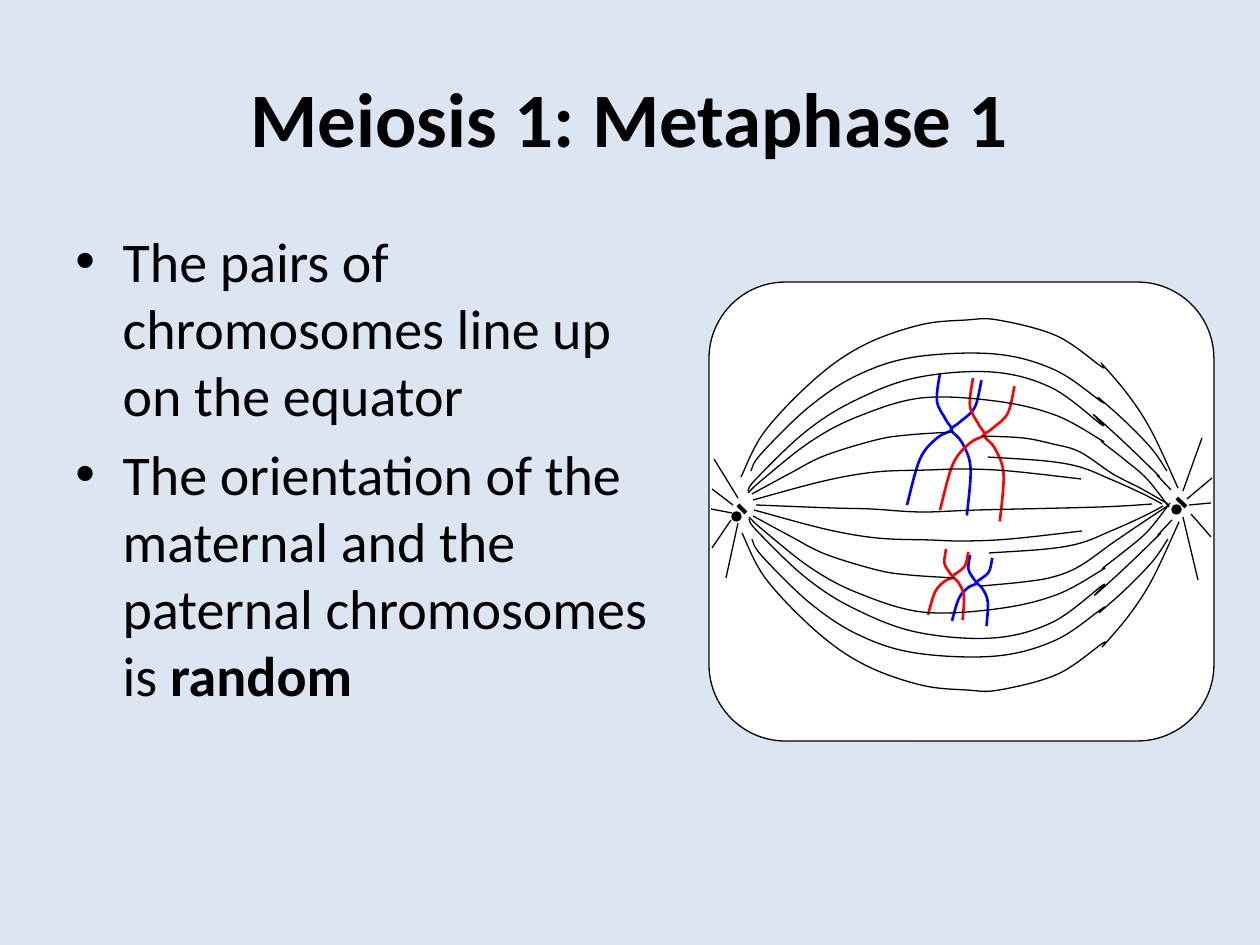
from lxml.etree import SubElement
from pptx import Presentation
from pptx.dml.color import RGBColor
from pptx.enum.shapes import MSO_CONNECTOR, MSO_SHAPE as SHAPE
from pptx.enum.text import MSO_ANCHOR, PP_ALIGN
from pptx.oxml.ns import qn
from pptx.util import Pt

PX = 914400 / 126
HEX = {"sky": "DCE6F2", "ink": "000000", "cell": "FFFFFF",
       "blue": "0000FF", "red": "FF0000"}
RGB = {name: RGBColor.from_string(code) for name, code in HEX.items()}


def emu(*nums):
    return [round(n * PX) for n in nums]


def curve(knots, tone="ink", width=0.75):
    """Draw a smooth open curve through the knots, given in px."""
    pts = [tuple(emu(*k)) for k in knots]
    pen = parts.build_freeform(*pts[0], scale=1.0)
    pen.add_line_segments(pts[1:], close=False)
    shape = pen.convert_to_shape()
    shape.shadow.inherit = False
    shape.fill.background()
    shape.line.color.rgb = RGB[tone]
    shape.line.width = Pt(width)
    left, top = (min(p[i] for p in pts) for i in (0, 1))
    loc = [(x - left, y - top) for x, y in pts]
    ends = [loc[0]] + loc + [loc[-1]]
    track = shape.element.find(".//" + qn("a:path"))
    for seg in track.findall(qn("a:lnTo")):
        track.remove(seg)
    for a, b, c, d in zip(ends, ends[1:], ends[2:], ends[3:]):
        # Each knot's tangent runs parallel to the chord of its neighbours.
        one = [q + (r - p) / 6 for p, q, r in zip(a, b, c)]
        two = [q - (r - p) / 6 for p, q, r in zip(b, c, d)]
        bez = SubElement(track, qn("a:cubicBezTo"))
        for x, y in (one, two, c):
            SubElement(bez, qn("a:pt"), x=str(round(x)), y=str(round(y)))
    return shape


prs = Presentation()
prs.slide_width, prs.slide_height = emu(1260, 945)
slide = prs.slides.add_slide(prs.slide_layouts[6])
slide.background.fill.solid()
slide.background.fill.fore_color.rgb = RGB["sky"]

# Title and bullets
title = [[("Meiosis 1: Metaphase 1", True)]]
notes = [
    [("The pairs of chromosomes line up on the equator", False)],
    [("The orientation of the maternal and the paternal chromosomes is ", False),
     ("random", True)],
]
for box, paras, size, listed in (
        ((63, 38, 1134, 157), title, 44, False),
        ((63, 220, 619, 624), notes, 32, True)):
    frame = slide.shapes.add_textbox(*emu(*box)).text_frame
    frame.word_wrap = True
    frame.vertical_anchor = MSO_ANCHOR.TOP if listed else MSO_ANCHOR.MIDDLE
    for i, runs in enumerate(paras):
        para = frame.add_paragraph() if i else frame.paragraphs[0]
        para.alignment = PP_ALIGN.LEFT if listed else PP_ALIGN.CENTER
        if i:
            para.space_before = Pt(6.4)
        if listed:
            props = para._p.get_or_add_pPr()
            props.set("marL", "342900")
            props.set("indent", "-342900")
            SubElement(props, qn("a:buFont"), typeface="Arial")
            SubElement(props, qn("a:buChar"), char="•")
        for text, bold in runs:
            run = para.add_run()
            run.text = text
            run.font.name = "Calibri"
            run.font.size = Pt(size)
            run.font.bold = bold
            run.font.color.rgb = RGB["ink"]

# Cell and centrioles
parts = slide.shapes.add_group_shape().shapes
for kind, box, tone in (
        (SHAPE.ROUNDED_RECTANGLE, (709, 282, 505, 459), "cell"),
        (SHAPE.OVAL, (732, 512, 9, 9), "ink"),
        (SHAPE.OVAL, (1172, 505, 9, 9), "ink")):
    body = parts.add_shape(kind, *emu(*box))
    body.shadow.inherit = False
    body.fill.solid()
    body.fill.fore_color.rgb = RGB[tone]
    body.line.color.rgb = RGB["ink"]
    body.line.width = Pt(0.75)

# Asters: the last line of each is the thick centriole
left = [(738, 498, 714, 459), (733, 505, 712, 489), (732, 513, 711, 509),
        (712, 548, 731, 520), (738, 523, 726, 578), (738, 505, 746, 513)]
right = [(1183, 491, 1202, 438), (1187, 499, 1212, 478), (1189, 505, 1211, 503),
         (1211, 537, 1191, 514), (1183, 517, 1198, 580), (1177, 498, 1186, 507)]
for aster in (left, right):
    for ray in aster:
        line = parts.add_connector(MSO_CONNECTOR.STRAIGHT, *emu(*ray))
        line.line.color.rgb = RGB["ink"]
        line.line.width = Pt(2.25 if ray == aster[-1] else 0.75)
        SubElement(line.element.spPr, qn("a:effectLst"))

# Chromosomes: each is a chromatid and its mirrored, turned sister
arm = [(33, 0), (30, 28), (39, 47), (44, 57), (30, 65), (13, 86), (0, 132)]
for tone, sx, sy, first, sister in (
        ("blue", 1, 1, (907, 373), (946, 380)),
        ("red", 1, 1, (940, 378), (979, 386)),
        ("blue", 0.55, 0.5, (952, 555), (974, 558)),
        ("red", 0.55, 0.5, (928, 549), (950, 552))):
    x, y = first
    curve([(x + sx * u, y + sy * v) for u, v in arm], tone, 1.5)
    x, y = sister
    twin = curve([(x + sx * (45 - u), y + sy * v) for u, v in arm], tone, 1.5)
    twin.rotation = 20.2

# Spindle: upper fibres are reflected below the equator of the cell
upper = [
    [(748, 491), (756, 479), (804, 433), (852, 402), (915, 378), (992, 372),
     (1052, 388), (1102, 425), (1094, 415), (1126, 444), (1158, 475),
     (1157, 475), (1171, 490)],
    [(748, 493), (762, 480), (810, 442), (857, 417), (921, 398), (995, 401),
     (1055, 415), (1101, 440), (1102, 442), (1125, 460), (1147, 479), (1169, 507)],
    [(751, 471), (761, 454), (809, 407), (858, 375), (915, 357), (995, 354),
     (1055, 370), (1102, 402), (1099, 398), (1126, 422), (1152, 449), (1167, 471)],
    [(741, 477), (765, 431), (816, 378), (864, 345), (920, 325), (966, 320),
     (998, 320), (1057, 336), (1102, 367), (1102, 364), (1129, 396),
     (1152, 432), (1178, 488)],
    [(752, 494), (789, 474), (824, 456), (876, 440), (908, 435), (953, 432)],
    [(753, 500), (824, 481), (876, 472), (929, 470), (963, 469), (1009, 471),
     (1081, 479)],
    [(988, 457), (1046, 461), (1080, 467), (1110, 479), (1137, 491), (1155, 500),
     (1162, 504)],
]
single = [
    [(982, 436), (1023, 438), (1053, 444), (1080, 452), (1113, 474), (1142, 489),
     (1168, 504)],
    [(981, 586), (1023, 582), (1053, 577), (1080, 566), (1114, 542), (1142, 523),
     (1169, 505)],
    [(756, 505), (832, 508), (871, 509), (921, 512), (979, 510), (1100, 507),
     (1152, 504)],
]
lower = [[(x + 1, 1010 - y) for x, y in fibre] for fibre in upper]
for fibre in upper + lower + single:
    curve(fibre)

prs.save("out.pptx")
